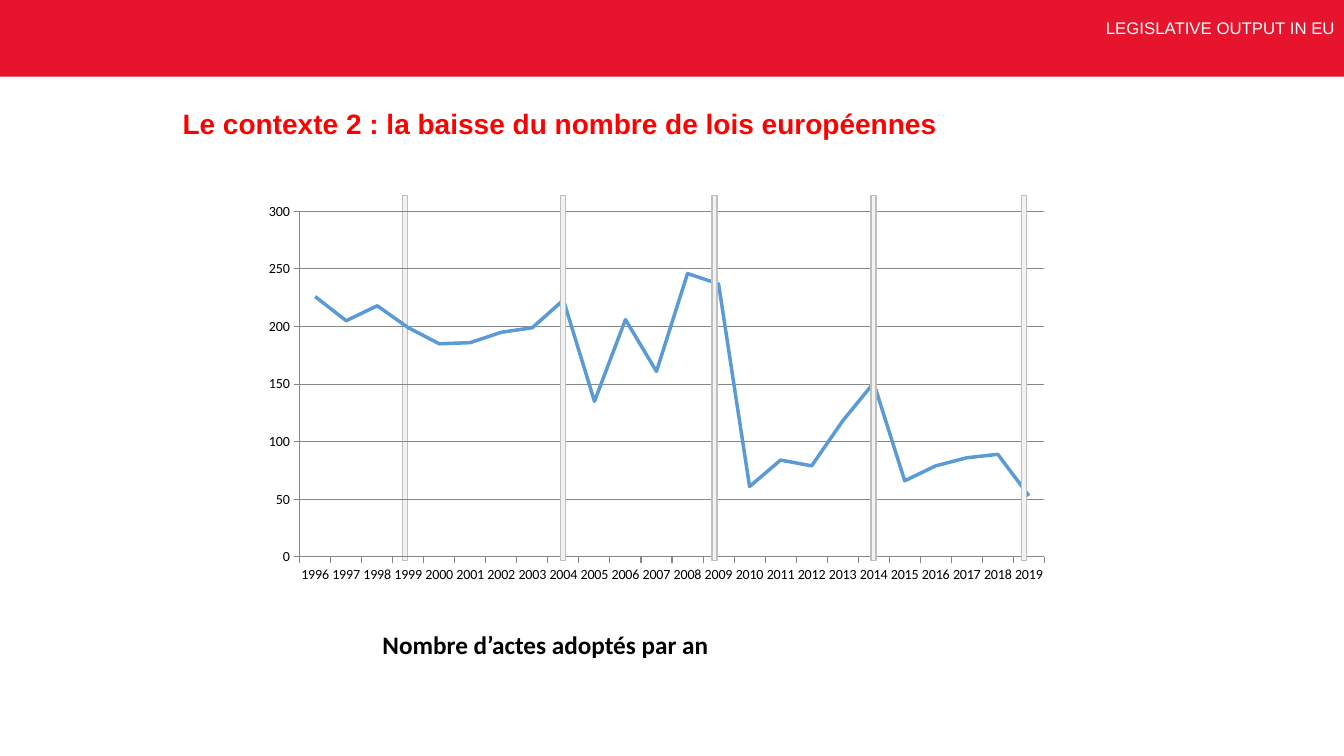
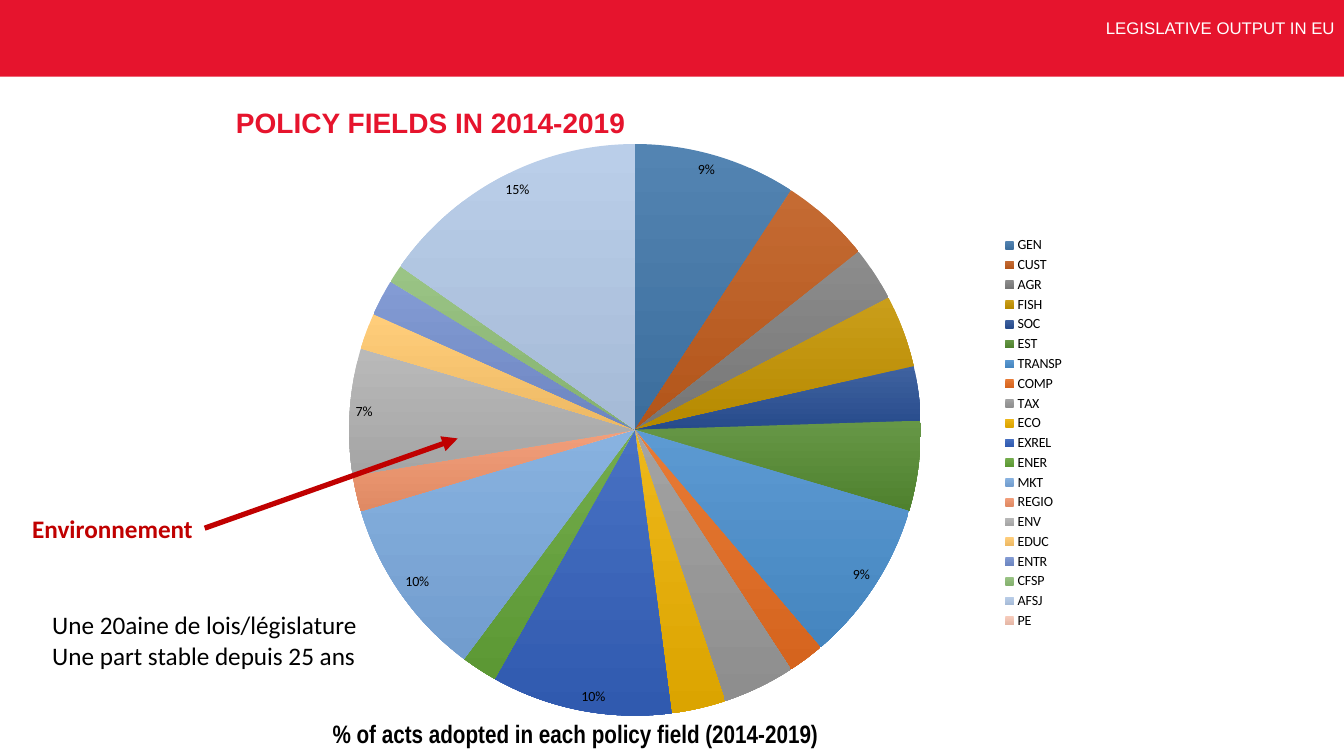
from lxml.etree import SubElement
from pptx import Presentation
from pptx.chart.data import CategoryChartData
from pptx.dml.color import RGBColor
from pptx.enum.chart import (XL_CHART_TYPE, XL_LABEL_POSITION,
                             XL_LEGEND_POSITION, XL_TICK_MARK)
from pptx.enum.shapes import MSO_CONNECTOR, MSO_SHAPE
from pptx.enum.text import MSO_ANCHOR, MSO_AUTO_SIZE, PP_ALIGN
from pptx.oxml.ns import qn
from pptx.util import Inches, Pt

# Content
HEAD = "LEGISLATIVE OUTPUT IN EU"
RED, DARK, BLACK, GREY = "E6142D", "C00000", "000000", "878787"

YEARS = [str(year) for year in range(1996, 2020)]
ACTS = [226, 205, 218, 199, 185, 186, 195, 199, 223, 135, 206, 161,
        246, 237, 61, 84, 79, 118, 151, 66, 79, 86, 89, 53]
VOTES = [3.99, 5.56, 7.06, 8.64, 10.13]  # left edges of the election bars

FIELDS = [  # field, share of acts, colour
    ("GEN", 0.09, "4076A9"), ("CUST", 0.05, "BF5B1C"),
    ("AGR", 0.03, "7F7F7F"), ("FISH", 0.04, "C49300"),
    ("SOC", 0.03, "2A5195"), ("EST", 0.05, "558B32"),
    ("TRANSP", 0.09, "4A8FCD"), ("COMP", 0.02, "E56C20"),
    ("TAX", 0.04, "999999"), ("ECO", 0.03, "ECB000"),
    ("EXREL", 0.1, "3461BC"), ("ENER", 0.02, "63A338"),
    ("MKT", 0.1, "7BA9DD"), ("REGIO", 0.02, "F1946C"),
    ("ENV", 0.07, "B1B1B1"), ("EDUC", 0.02, "FFC76B"),
    ("ENTR", 0.02, "7590CF"), ("CFSP", 0.01, "8FBE77"),
    ("AFSJ", 0.15, "B2C9E7"), ("PE", 0, "F6C5B3"),
]
LABEL_MIN = 0.07  # smaller shares carry no label
NOTES = ["Une 20aine de lois/législature", "Une part stable depuis 25 ans"]


# Helpers
def color(code):
    return RGBColor.from_string(code)


def blend(code, goal, part):
    """Mix a colour with a grey level from 0 to 255."""
    parts = [int(code[i:i + 2], 16) for i in (0, 2, 4)]
    return "".join(f"{round(p + (goal - p) * part):02X}" for p in parts)


def write(frame, text, size=18, ink=BLACK, font="Calibri", bold=False,
          align=PP_ALIGN.LEFT, space=1.0, left=0, hang=0):
    lines = [text] if isinstance(text, str) else text
    for i, line in enumerate(lines):
        para = frame.paragraphs[0] if i == 0 else frame.add_paragraph()
        props = para._p.get_or_add_pPr()
        props.set("marL", str(Inches(left)))
        props.set("indent", str(Inches(hang)))
        SubElement(props, qn("a:buNone"))
        para.alignment, para.line_spacing = align, space
        para.space_before = Pt(0)
        run = para.add_run()
        run.text = line
        run.font.size, run.font.name, run.font.bold = Pt(size), font, bold
        run.font.color.rgb = color(ink)


def put(shape, *box):
    shape.left, shape.top, shape.width, shape.height = map(Inches, box)


def label(slide, box, text, wrap=True, anchor=MSO_ANCHOR.TOP, **style):
    shape = slide.shapes.add_textbox(*map(Inches, box))
    frame = shape.text_frame
    frame.word_wrap, frame.vertical_anchor = wrap, anchor
    frame.auto_size = MSO_AUTO_SIZE.SHAPE_TO_FIT_TEXT
    write(frame, text, **style)
    return shape


def block(slide, box, fill, edge=None):
    shape = slide.shapes.add_shape(MSO_SHAPE.RECTANGLE, *map(Inches, box))
    shape.shadow.inherit = False
    shape.fill.solid()
    shape.fill.fore_color.rgb = color(fill)
    if edge:
        shape.line.color.rgb, shape.line.width = color(edge), Pt(1)
    else:
        shape.line.fill.background()
    return shape


def graph(slide, kind, box, cats, vals, area, form="General"):
    """Add a chart whose plot fills area: x, y, w, h as shares of the box."""
    data = CategoryChartData(number_format=form)
    data.categories = cats
    data.add_series("Series 1", vals)
    chart = slide.shapes.add_chart(kind, *map(Inches, box), data).chart
    chart.has_title = chart.has_legend = False
    chart.font.size, chart.font.name = Pt(10), "Calibri"
    chart.font.color.rgb = color(BLACK)
    plot = chart._chartSpace.chart.plotArea
    for old in plot.findall(qn("c:layout")):
        plot.remove(old)
    rule = SubElement(plot, qn("c:layout"))
    plot.insert(0, rule)
    rule = SubElement(rule, qn("c:manualLayout"))
    pairs = [("layoutTarget", "inner"), ("xMode", "edge"), ("yMode", "edge")]
    for tag, val in pairs + list(zip("xywh", area)):
        SubElement(rule, qn("c:" + tag)).set("val", str(val))
    return chart


def page(deck, text, box, **style):
    slide = deck.slides.add_slide(deck.slide_layouts[1])
    title, body = slide.placeholders
    put(title, *box)
    frame = title.text_frame
    frame.word_wrap, frame.vertical_anchor = True, MSO_ANCHOR.MIDDLE
    frame.auto_size = MSO_AUTO_SIZE.NONE
    frame.margin_right = 0
    write(frame, text, size=20, font="Arial", bold=True, **style)
    put(body, 3.52, 0.15, 9.82, 0.38)
    body.text_frame.auto_size = MSO_AUTO_SIZE.NONE
    write(body.text_frame, HEAD, size=12, ink="FFFFFF", font="Arial",
          align=PP_ALIGN.RIGHT, space=0.9)
    return slide


# Slides
def trend(deck):
    slide = page(deck, "Le contexte 2 : la baisse du nombre de lois européennes",
                 (1.52, 0.84, 10, 0.76), ink="FF0000", left=0.57, hang=-0.38)
    # The red band belongs to the layout, behind everything
    band = block(slide, (0, 0, 13.33, 0.76), RED)
    slide.slide_layout.shapes.element.insert(2, band.element)

    label(slide, (2.97, 6.19, 4.88, 0.4), "Nombre d’actes adoptés par an",
          bold=True, align=PP_ALIGN.CENTER)

    def bar(left):
        block(slide, (left, 1.94, 0.05, 3.62), "F2F2F2", "BFBFBF")

    bar(VOTES[0])
    chart = graph(slide, XL_CHART_TYPE.LINE, (2.49, 1.94, 8.03, 3.94),
                  YEARS, ACTS, (0.06, 0.04, 0.92, 0.87))
    chart.plots[0].vary_by_categories = False
    line = chart.series[0]
    line.smooth = False
    line.format.line.color.rgb = color("5B9BD5")
    line.format.line.width = Pt(2.5)
    scale = chart.value_axis
    scale.minimum_scale, scale.maximum_scale, scale.major_unit = 0, 300, 50
    scale.has_major_gridlines = True
    for axis in (chart.category_axis, scale):
        axis.major_tick_mark = XL_TICK_MARK.OUTSIDE
        axis.format.line.color.rgb = color(GREY)
    scale.major_gridlines.format.line.color.rgb = color(GREY)
    for left in VOTES[1:]:
        bar(left)


def share(deck):
    slide = page(deck, "POLICY FIELDS IN 2014-2019", (2.24, 0.85, 10, 0.76),
                 ink=RED, space=0.9)
    label(slide, (3.2, 7.08, 6.06, 0.4),
          "% of acts adopted in each policy field (2014-2019)",
          anchor=MSO_ANCHOR.MIDDLE, font="Arial Narrow", bold=True)

    # Pie with softly shaded slices
    names, vals, inks = zip(*FIELDS)
    chart = graph(slide, XL_CHART_TYPE.PIE, (2.73, 1.31, 7.93, 5.97),
                  names, vals, (0.09, 0.02, 0.72, 0.95), "0%")
    chart.plots[0].vary_by_categories = True
    chart.has_legend = True
    chart.legend.position = XL_LEGEND_POSITION.RIGHT
    chart.legend.include_in_layout = False
    pie = chart.series[0]
    pie.data_labels.show_value = False
    for i, (val, ink) in enumerate(zip(vals, inks)):
        point = pie.points[i]
        point.format.line.fill.background()
        fill = point.format.fill
        fill.gradient()
        fill.gradient_angle = 270
        tones = blend(ink, 255, 0.1), blend(ink, 0, 0.07)
        for stop, tone in zip(fill.gradient_stops, tones):
            stop.color.rgb = color(tone)
        if val >= LABEL_MIN:
            point.data_label.position = XL_LABEL_POSITION.INSIDE_END

    # Arrow from the note to its slice
    note = label(slide, (0.22, 5.04, 1.81, 0.4), "Environnement",
                 wrap=False, ink=DARK, bold=True)
    arrow = slide.shapes.add_connector(
        MSO_CONNECTOR.STRAIGHT, *map(Inches, (2.03, 5.24, 4.54, 4.35)))
    arrow.begin_connect(note, 3)
    arrow.line.color.rgb, arrow.line.width = color(DARK), Pt(3.75)
    props = arrow.element.spPr
    SubElement(props.find(qn("a:ln")), qn("a:tailEnd")).set("type", "triangle")
    SubElement(props, qn("a:effectLst"))
    label(slide, (0.42, 6, 3.24, 0.71), NOTES, wrap=False)


def main():
    deck = Presentation()
    deck.slide_width, deck.slide_height = Inches(13.33), Inches(7.5)
    trend(deck)
    share(deck)
    deck.save("out.pptx")


if __name__ == "__main__":
    main()
